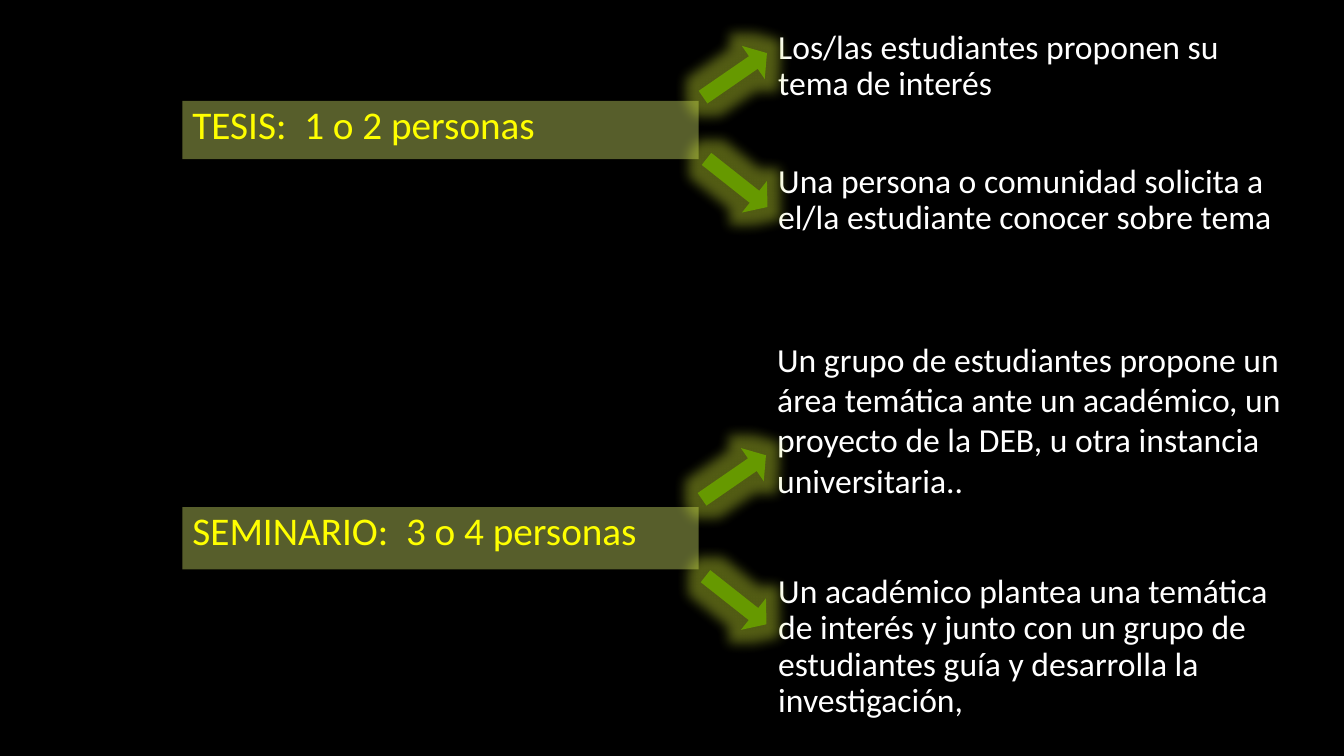
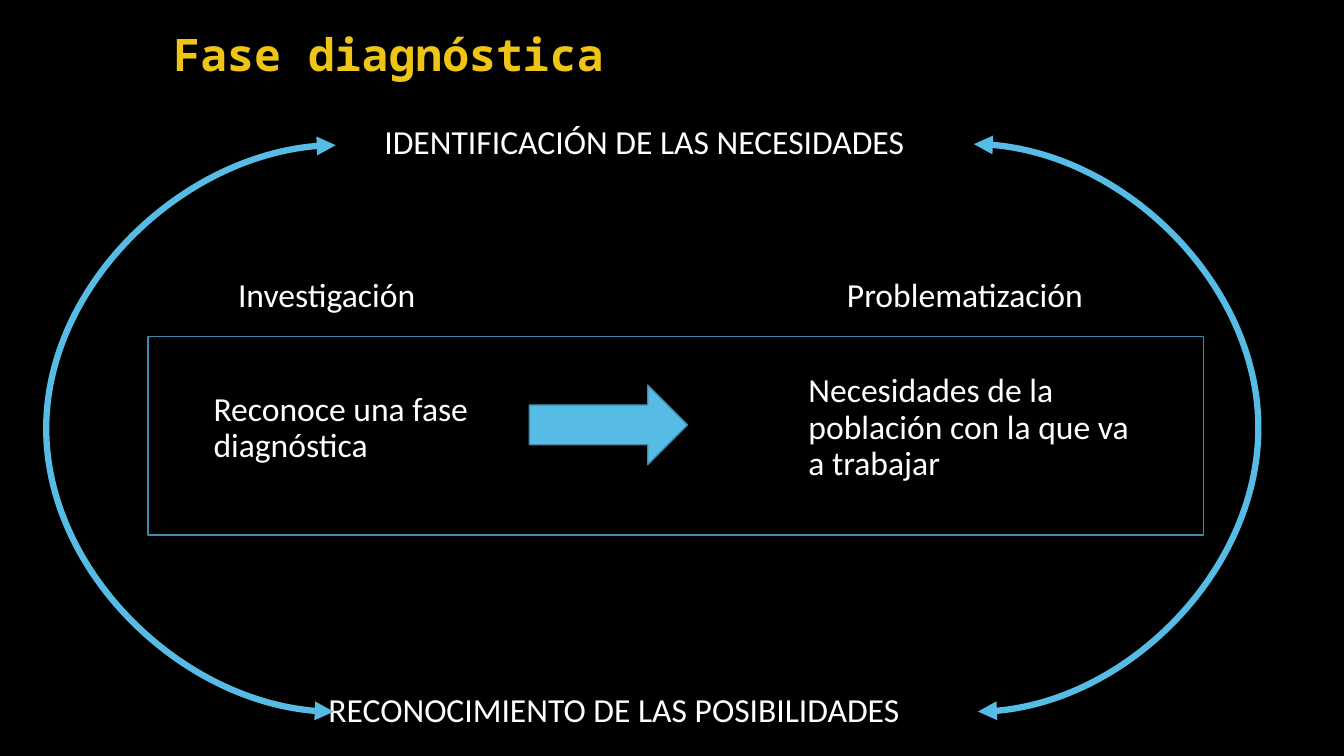
from dataclasses import dataclass

from pptx import Presentation
from pptx.dml.color import RGBColor
from pptx.enum.shapes import MSO_CONNECTOR, MSO_SHAPE
from pptx.enum.text import MSO_ANCHOR, MSO_AUTO_SIZE, PP_ALIGN
from pptx.oxml import parse_xml
from pptx.oxml.ns import nsdecls, qn
from pptx.util import Pt


@dataclass(frozen=True)
class Theme:
    background: str = "000000"
    text: str = "FFFFFF"
    title: str = "EEC517"
    heading: str = "FFFF00"
    band: str = "AEBD57"
    arrow: str = "669900"
    glow: str = "D0E733"
    accent: str = "57BCE5"
    outline: str = "408BA9"
    body_font: str = "Calibri"
    title_font: str = "Noto Sans Mono"
    body_size: int = 24
    heading_size: int = 28
    title_size: int = 32


theme = Theme()
PX = 9144  # 100 px to the inch


def write_text(shape, text, size=theme.body_size, color=theme.text, font=theme.body_font,
               bold=False, align=PP_ALIGN.LEFT, spacing=0.9, before=0, fit=MSO_AUTO_SIZE.NONE):
    frame = shape.text_frame
    frame.word_wrap = True
    frame.auto_size = fit
    frame.vertical_anchor = MSO_ANCHOR.TOP
    paragraph = frame.paragraphs[0]
    paragraph.alignment = align
    paragraph.line_spacing = spacing
    paragraph.space_before = Pt(before)
    run = paragraph.add_run()
    run.text = text
    run.font.name = font
    run.font.size = Pt(size)
    run.font.bold = bold
    run.font.color.rgb = RGBColor.from_string(color)


def add_box(slide, kind, box, fill=None, line=None):
    shape = slide.shapes.add_shape(kind, *[value * PX for value in box])
    shape.shadow.inherit = False
    if fill:
        shape.fill.solid()
        shape.fill.fore_color.rgb = RGBColor.from_string(fill)
    else:
        shape.fill.background()
    if line:
        shape.line.color.rgb = RGBColor.from_string(line)
        shape.line.width = Pt(1)
    else:
        shape.line.fill.background()
    return shape


# Presentation and shared background
presentation = Presentation()
presentation.slide_width = 1333 * PX
presentation.slide_height = 750 * PX
background = presentation.slide_master.background.fill
background.solid()
background.fore_color.rgb = RGBColor.from_string(theme.background)
title_only, blank = presentation.slide_layouts[5], presentation.slide_layouts[6]

# Slide 1: kinds of final work
slide = presentation.slides.add_slide(blank)

# Heading bands, half transparent
for text, top, height in [("TESIS:  1 o 2 personas", 100, 58),
                          ("SEMINARIO:  3 o 4 personas", 503, 62)]:
    band = add_box(slide, MSO_SHAPE.RECTANGLE, (181, top, 512, height), fill=theme.band)
    band_color = band._element.spPr.find(qn("a:solidFill"))[0]
    band_color.append(parse_xml(f'<a:alpha {nsdecls("a")} val="50000"/>'))
    write_text(band, text, size=theme.heading_size, color=theme.heading, before=18)

# Ways each kind of work begins
for text, left, top, height, spacing in [
    ("Un grupo de estudiantes propone un área temática ante un académico, un proyecto "
     "de la DEB, u otra instancia universitaria..", 761, 331, 172, 1.0),
    ("Un académico plantea una temática de interés y junto con un grupo de estudiantes "
     "guía y desarrolla la investigación,", 762, 565, 156, 0.9),
    ("Los/las estudiantes proponen su tema de interés", 762, 25, 83, 0.9),
    ("Una persona o comunidad solicita a el/la estudiante conocer sobre tema",
     762, 158, 83, 0.9),
]:
    text_box = slide.shapes.add_textbox(left * PX, top * PX, 522 * PX, height * PX)
    write_text(text_box, text, spacing=spacing, fit=MSO_AUTO_SIZE.SHAPE_TO_FIT_TEXT)

# Glowing arrows from the bands to the texts
for left, top, rotation in [(709, 36, 235.4), (708, 435, 235.4),
                            (711, 143, 308.3), (710, 557, 308.3)]:
    arrow = add_box(slide, MSO_SHAPE.DOWN_ARROW, (left, top, 40, 77), fill=theme.arrow)
    arrow.rotation = rotation
    arrow.adjustments[0] = 0.38
    arrow.adjustments[1] = 0.41
    arrow._element.spPr.find(qn("a:effectLst")).append(parse_xml(
        f'<a:glow {nsdecls("a")} rad="228600"><a:srgbClr val="{theme.glow}">'
        '<a:alpha val="40000"/></a:srgbClr></a:glow>'))

# Slide 2: diagnostic phase
slide = presentation.slides.add_slide(title_only)
title = slide.shapes.title
title.left, title.top, title.width, title.height = [
    value * PX for value in (162, 28, 1000, 112)]
write_text(title, "Fase diagnóstica", size=theme.title_size, color=theme.title,
           font=theme.title_font, bold=True)

# Frame and arrow between the two steps
add_box(slide, MSO_SHAPE.RIGHT_ARROW, (525, 382, 157, 79),
        fill=theme.accent, line=theme.outline)
add_box(slide, MSO_SHAPE.RECTANGLE, (147, 334, 1047, 197), line=theme.outline)

# Labels
for text, box, align in [
    ("Reconoce una fase diagnóstica", (202, 384, 354, 83), PP_ALIGN.LEFT),
    ("Necesidades de la población con la que va a trabajar",
     (792, 366, 354, 119), PP_ALIGN.LEFT),
    ("Investigación", (131, 271, 386, 46), PP_ALIGN.CENTER),
    ("Problematización", (764, 271, 386, 46), PP_ALIGN.CENTER),
    ("IDENTIFICACIÓN DE LAS NECESIDADES", (312, 120, 654, 46), PP_ALIGN.CENTER),
    ("RECONOCIMIENTO DE LAS POSIBILIDADES", (316, 683, 654, 46), PP_ALIGN.LEFT),
]:
    text_box = slide.shapes.add_textbox(*[value * PX for value in box])
    write_text(text_box, text, align=align, fit=MSO_AUTO_SIZE.SHAPE_TO_FIT_TEXT)

# Double-headed curves, each bulging out to its outer edge
for start_x, start_y, end_x, end_y, outer_x in [(966, 143, 970, 706, 1247),
                                                (333, 144, 331, 706, 47)]:
    curve = slide.shapes.add_connector(MSO_CONNECTOR.CURVE, start_x * PX, start_y * PX,
                                       end_x * PX, end_y * PX)
    curve.line.color.rgb = RGBColor.from_string(theme.accent)
    curve.line.width = Pt(4.5)
    properties = curve._element.spPr
    bulge = round((outer_x - start_x) / (end_x - start_x) * 100000)
    guides = properties.find(qn("a:prstGeom")).get_or_add_avLst()
    guides.append(parse_xml(f'<a:gd {nsdecls("a")} name="adj1" fmla="val {bulge}"/>'))
    for end in ("headEnd", "tailEnd"):
        properties.find(qn("a:ln")).append(
            parse_xml(f'<a:{end} {nsdecls("a")} type="triangle"/>'))
    properties.append(parse_xml(f'<a:effectLst {nsdecls("a")}/>'))

presentation.save("out.pptx")
